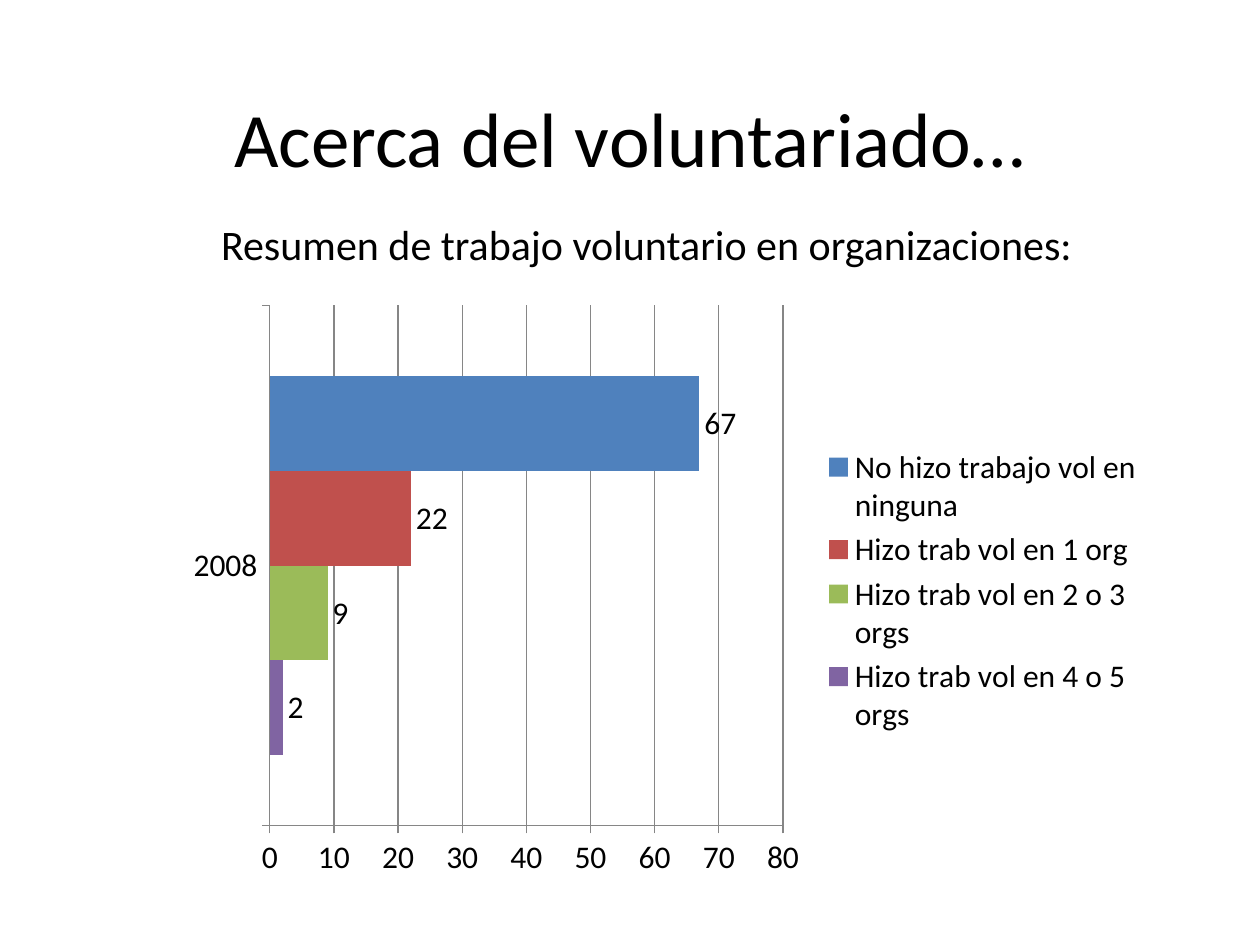
from pptx import Presentation
from pptx.chart.data import CategoryChartData
from pptx.dml.color import RGBColor
from pptx.enum.chart import XL_CHART_TYPE as ChartType
from pptx.enum.chart import XL_LABEL_POSITION as LabelPosition
from pptx.enum.chart import XL_LEGEND_POSITION as LegendPosition
from pptx.enum.chart import XL_TICK_MARK as TickMark
from pptx.enum.text import MSO_ANCHOR, PP_ALIGN
from pptx.util import Inches, Pt

FONT = "Calibri"
BLACK = RGBColor(0x00, 0x00, 0x00)
GRAY = RGBColor(0x86, 0x86, 0x86)
PURPLE = RGBColor(0x80, 0x64, 0xA2)
GREEN = RGBColor(0x9B, 0xBB, 0x59)
RED = RGBColor(0xC0, 0x50, 0x4D)
BLUE = RGBColor(0x4F, 0x81, 0xBD)

# Series from the bottom bar to the top one
VOLUNTEER_SERIES = [
    ("Hizo trab vol en 4 o 5 orgs", 2, PURPLE),
    ("Hizo trab vol en 2 o 3 orgs", 9, GREEN),
    ("Hizo trab vol en 1 org", 22, RED),
    ("No hizo trabajo vol en ninguna", 67, BLUE),
]


def format_font(font, size, color=BLACK):
    font.name = FONT
    font.size = Pt(size)
    font.bold = False
    font.color.rgb = color


def write_text(shape, text, *, size, align=PP_ALIGN.CENTER, anchor=MSO_ANCHOR.MIDDLE):
    frame = shape.text_frame
    frame.word_wrap = True
    frame.vertical_anchor = anchor
    paragraph = frame.paragraphs[0]
    paragraph.alignment = align
    run = paragraph.add_run()
    run.text = text
    format_font(run.font, size)


presentation = Presentation()
presentation.slide_width = Inches(10)
presentation.slide_height = Inches(7.5)
slide = presentation.slides.add_slide(presentation.slide_layouts[5])

# Title placeholder: what the chart shows
title = slide.shapes.title
title.left, title.top = Inches(0.67), Inches(1.31)
title.width, title.height = Inches(9), Inches(1.25)
write_text(title, "Resumen de trabajo voluntario en organizaciones: ", size=24)

# Bar chart
chart_data = CategoryChartData(number_format="0")
chart_data.categories = ["2008"]
for name, value, color in VOLUNTEER_SERIES:
    chart_data.add_series(name, [value])
chart = slide.shapes.add_chart(
    ChartType.BAR_CLUSTERED,
    Inches(1.38), Inches(2.33), Inches(7.8), Inches(4.72),
    chart_data,
).chart
chart.has_title = False
format_font(chart.font, 18)

plot = chart.plots[0]
plot.gap_width = 150
plot.overlap = 0
plot.vary_by_categories = False
for series, (name, value, color) in zip(plot.series, VOLUNTEER_SERIES):
    series.format.fill.solid()
    series.format.fill.fore_color.rgb = color
    labels = series.data_labels
    labels.show_value = True
    labels.number_format = "0"
    labels.number_format_is_linked = False
    labels.position = LabelPosition.OUTSIDE_END
    format_font(labels.font, 18)

# Axes and gridlines
for axis in (chart.category_axis, chart.value_axis):
    axis.major_tick_mark = TickMark.OUTSIDE
    axis.minor_tick_mark = TickMark.NONE
    axis.format.line.color.rgb = GRAY
    axis.format.line.width = Pt(0.75)
value_axis = chart.value_axis
value_axis.minimum_scale = 0
value_axis.maximum_scale = 80
value_axis.major_unit = 10
value_axis.tick_labels.number_format = "0"
value_axis.tick_labels.number_format_is_linked = False
value_axis.has_major_gridlines = True
value_axis.major_gridlines.format.line.color.rgb = GRAY
value_axis.major_gridlines.format.line.width = Pt(0.75)

# Legend
chart.has_legend = True
chart.legend.position = LegendPosition.RIGHT
chart.legend.include_in_layout = False
format_font(chart.legend.font, 18)

# Heading
heading = slide.shapes.add_textbox(Inches(0.75), Inches(0.28), Inches(8.5), Inches(1.61))
write_text(heading, "Acerca del voluntariado…", size=44)

presentation.save("out.pptx")
